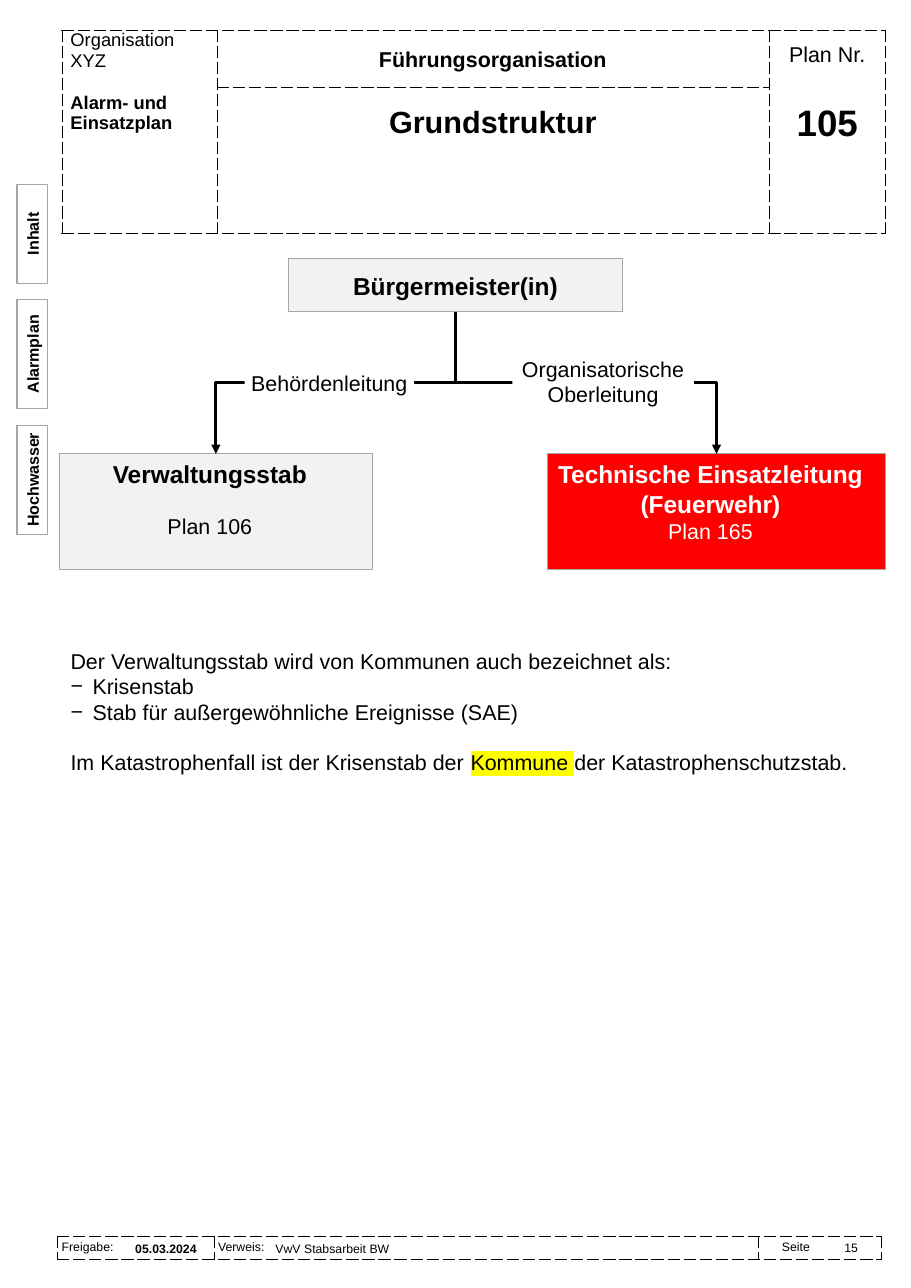
from dataclasses import dataclass

from lxml.etree import SubElement
from pptx import Presentation
from pptx.dml.color import RGBColor
from pptx.enum.shapes import MSO_CONNECTOR, MSO_SHAPE
from pptx.enum.text import MSO_ANCHOR, MSO_AUTO_SIZE, PP_ALIGN
from pptx.oxml.ns import qn
from pptx.util import Emu, Inches, Pt

BLACK = RGBColor(0x00, 0x00, 0x00)
WHITE = RGBColor(0xFF, 0xFF, 0xFF)
PALE_GREY = RGBColor(0xF2, 0xF2, 0xF2)
EDGE_GREY = RGBColor(0xA6, 0xA6, 0xA6)
RED = RGBColor(0xFF, 0x00, 0x00)
YELLOW = RGBColor(0xFF, 0xFF, 0x00)
FONT = "Arial"
CENTER, LEFT, RIGHT = PP_ALIGN.CENTER, PP_ALIGN.LEFT, PP_ALIGN.RIGHT
MIDDLE, TOP = MSO_ANCHOR.MIDDLE, MSO_ANCHOR.TOP
PAGE_WIDTH, PAGE_HEIGHT = Inches(8.27), Inches(11.69)


@dataclass(frozen=True)
class Line:
    text: str
    size: float
    bold: bool = False
    before: float = 0
    bullet: str = ""
    marked: str = ""


@dataclass(frozen=True)
class Block:
    area: tuple
    lines: tuple
    align: PP_ALIGN = CENTER
    anchor: MSO_ANCHOR = MIDDLE
    insets: tuple = (0.04, 0, 0.04, 0)
    color: RGBColor = BLACK
    fill: RGBColor = WHITE
    edge: RGBColor | None = EDGE_GREY


@dataclass(frozen=True)
class Cell:
    row: int
    column: int
    lines: tuple
    insets: tuple
    align: PP_ALIGN = LEFT


def across(percent: float) -> Emu:
    return Emu(round(PAGE_WIDTH * percent / 100))


def down(percent: float) -> Emu:
    return Emu(round(PAGE_HEIGHT * percent / 100))


def place(area: tuple) -> tuple:
    left, top, width, height = area
    return across(left), down(top), across(width), down(height)


def write(frame, lines: tuple, align: PP_ALIGN, color: RGBColor = BLACK) -> None:
    for number, line in enumerate(lines):
        paragraph = frame.add_paragraph() if number else frame.paragraphs[0]
        start, marked, end = line.text.partition(line.marked) if line.marked else (line.text, "", "")
        paragraph.text = start
        for piece in filter(None, (marked, end)):
            paragraph.add_run().text = piece
        paragraph.alignment = align
        paragraph.space_before = Pt(line.before)
        properties = paragraph.font._element.getparent()
        indent = Inches(0.2) if line.bullet else 0
        properties.set("marL", str(indent))
        properties.set("indent", str(-indent))
        for default in properties.findall(qn("a:defRPr")):
            properties.remove(default)
        if line.bullet:
            paragraph.level = 1
            SubElement(properties, qn("a:buChar")).set("char", line.bullet)
        else:
            SubElement(properties, qn("a:buNone"))
        for run in paragraph.runs:
            run.font.size, run.font.bold, run.font.name = Pt(line.size), line.bold, FONT
            run.font.color.rgb = color
            if marked and run.text == marked:
                fill = run.font._element.find(qn("a:solidFill"))
                highlight = SubElement(run.font._element, qn("a:highlight"))
                SubElement(highlight, qn("a:srgbClr")).set("val", str(YELLOW))
                fill.addnext(highlight)


def fill_frame(shape, block: Block) -> None:
    frame = shape.text_frame
    frame.word_wrap, frame.auto_size = True, MSO_AUTO_SIZE.NONE
    frame.vertical_anchor = block.anchor
    (frame.margin_left, frame.margin_top,
     frame.margin_right, frame.margin_bottom) = map(Inches, block.insets)
    write(frame, block.lines, block.align, block.color)


def fill_placeholder(shape, block: Block) -> None:
    shape.left, shape.top, shape.width, shape.height = place(block.area)
    fill_frame(shape, block)


def add_box(slide, block: Block):
    box = slide.shapes.add_shape(MSO_SHAPE.RECTANGLE, *place(block.area))
    box.shadow.inherit = False
    box.fill.solid()
    box.fill.fore_color.rgb = block.fill
    if block.edge is None:
        box.line.fill.background()
    else:
        box.line.color.rgb, box.line.width = block.edge, Pt(0.75)
    fill_frame(box, block)
    return box


def add_dashed_table(slide, left: float, top: float, columns: tuple, rows: tuple,
                     cells: tuple, merged_columns: tuple = ()) -> None:
    area = place((left, top, sum(columns), sum(rows)))
    table = slide.shapes.add_table(len(rows), len(columns), *area).table
    table.first_row = table.horz_banding = False
    for column, share in zip(table.columns, columns):
        column.width = across(share)
    for row, share in zip(table.rows, rows):
        row.height = down(share)
    for column in merged_columns:
        table.cell(0, column).merge(table.cell(len(rows) - 1, column))
    for cell in table.iter_cells():
        properties = cell._tc.get_or_add_tcPr()
        for side in ("lnL", "lnR", "lnT", "lnB"):
            border = SubElement(properties, qn(f"a:{side}"), w=str(Pt(0.25)))
            paint = SubElement(border, qn("a:solidFill"))
            SubElement(paint, qn("a:srgbClr"), val=str(BLACK))
            SubElement(border, qn("a:prstDash"), val="sysDash")
        cell.fill.background()
    for entry in cells:
        cell = table.cell(entry.row, entry.column)
        (cell.margin_left, cell.margin_top,
         cell.margin_right, cell.margin_bottom) = map(Inches, entry.insets)
        write(cell.text_frame, entry.lines, entry.align)


def add_command_line(slide, leader, unit) -> None:
    start_x, start_y = leader.left + leader.width // 2, leader.top + leader.height
    end_x, end_y = unit.left + unit.width // 2, unit.top
    drop, span = end_y - start_y, abs(end_x - start_x)
    link = slide.shapes.add_connector(MSO_CONNECTOR.ELBOW, start_x, start_y, end_x, end_y)
    link.begin_connect(leader, 2)
    link.end_connect(unit, 0)
    link.left, link.top = (start_x + end_x - drop) // 2, (start_y + end_y - span) // 2
    link.width, link.height = drop, span
    properties = link.element.spPr
    transform = properties.find(qn("a:xfrm"))
    transform.flipV = False
    transform.flipH = end_x > start_x
    transform.rot = 270 if end_x > start_x else 90
    link.line.color.rgb, link.line.width = BLACK, Pt(2)
    SubElement(properties.find(qn("a:ln")), qn("a:tailEnd"), type="triangle")
    SubElement(properties, qn("a:effectLst"))


def main() -> None:
    deck = Presentation()
    deck.slide_width, deck.slide_height = PAGE_WIDTH, PAGE_HEIGHT
    slide = deck.slides.add_slide(deck.slide_layouts[4])
    dash = "−"
    explanation = (
        Line("Der Verwaltungsstab wird von Kommunen auch bezeichnet als:", 14),
        Line("Krisenstab", 14, bullet=dash),
        Line("Stab für außergewöhnliche Ereignisse (SAE)", 14, bullet=dash),
        Line("Im Katastrophenfall ist der Krisenstab der Kommune der Katastrophenschutzstab.",
             14, before=16, marked="Kommune "))
    headings = (
        Block((84.4, 6.67, 12.82, 5.56), (Line("105", 24, True),), insets=(0, 0, 0, 0)),
        Block((23.82, 2.31, 60.58, 4.53), (Line("Führungsorganisation", 14, True),)),
        Block((6.53, 49.87, 90.45, 14.97), explanation, LEFT, TOP, (0.1, 0.05, 0.1, 0.05)),
        Block((23.82, 6.67, 60.58, 5.56), (Line("Grundstruktur", 20, True),)),
        Block((29.75, 96.07, 53.69, 1.71), (Line("VwV Stabsarbeit BW", 8),), LEFT))
    for placeholder, block in zip(slide.placeholders, headings):
        fill_placeholder(placeholder, block)

    organisation = (Line("Organisation", 12), Line("XYZ", 12),
                    Line("Alarm- und", 12, True, before=14), Line("Einsatzplan", 12, True))
    add_dashed_table(slide, 6.77, 2.31, (17.05, 60.58, 12.82), (4.45, 11.33), (
        Cell(0, 0, organisation, (0.08, 0, 0.08, 0)),
        Cell(0, 2, (Line("Plan Nr.", 14),), (0.08, 0.12, 0.08, 0), CENTER)), (0, 2))
    add_dashed_table(slide, 6.29, 95.98, (17.17, 59.73, 13.54), (1.8,), tuple(
        Cell(0, column, (Line(caption, 8),), (indent, 0.04, 0.04, 0.04))
        for column, (caption, indent) in enumerate(
            (("Freigabe:", 0.04), ("Verweis:", 0.04), ("Seite", 0.22)))))

    for block in (
            Block((13.66, 96.07, 9.79, 1.71), (Line("05.03.2024", 8, True),), LEFT,
                  insets=(0.1, 0, 0.1, 0)),
            Block((89.72, 96.32, 5.44, 1.11), (Line("15", 8),), RIGHT, insets=(0.08, 0, 0.08, 0))):
        fill_frame(slide.shapes.add_textbox(*place(block.area)), block)

    unit_insets, label_insets = (0, 0.05, 0.11, 0.05), (0, 0.05, 0, 0.05)
    mayor = add_box(slide, Block((31.68, 20.1, 36.64, 4.11), (Line("Bürgermeister(in)", 16, True),),
                                 insets=label_insets, fill=PALE_GREY))
    units = (
        Block((6.53, 35.24, 34.34, 8.98),
              (Line("Verwaltungsstab", 16, True), Line("Plan 106", 14, before=16)),
              anchor=TOP, insets=unit_insets, fill=PALE_GREY),
        Block((60.1, 35.24, 37.12, 8.98),
              (Line("Technische Einsatzleitung", 16, True), Line("(Feuerwehr)", 16, True),
               Line("Plan 165", 14)),
              anchor=TOP, insets=unit_insets, color=WHITE, fill=RED))
    for unit in units:
        add_command_line(slide, mayor, add_box(slide, unit))
    for area, duty in (((26.84, 28.31, 18.62, 2.91), "Behördenleitung"),
                       ((56.23, 27.2, 19.95, 4.88), "Organisatorische Oberleitung")):
        add_box(slide, Block(area, (Line(duty, 14),), anchor=TOP, insets=label_insets, edge=None))

    tab_top = 14.29
    for chapter, length in (("Inhalt", 7.7), ("Alarmplan", 8.47), ("Hochwasser", 8.47)):
        tab = add_box(slide, Block((1.87, tab_top, 3.39, length), (Line(chapter, 10.5, True),),
                                   insets=(0, 0.04, 0, 0.04)))
        shift = (tab.height - tab.width) // 2
        tab.left, tab.top = tab.left - shift, tab.top + shift
        tab.width, tab.height = tab.height, tab.width
        tab.rotation = 270
        tab_top += length + 1.28

    deck.save("out.pptx")


if __name__ == "__main__":
    main()
